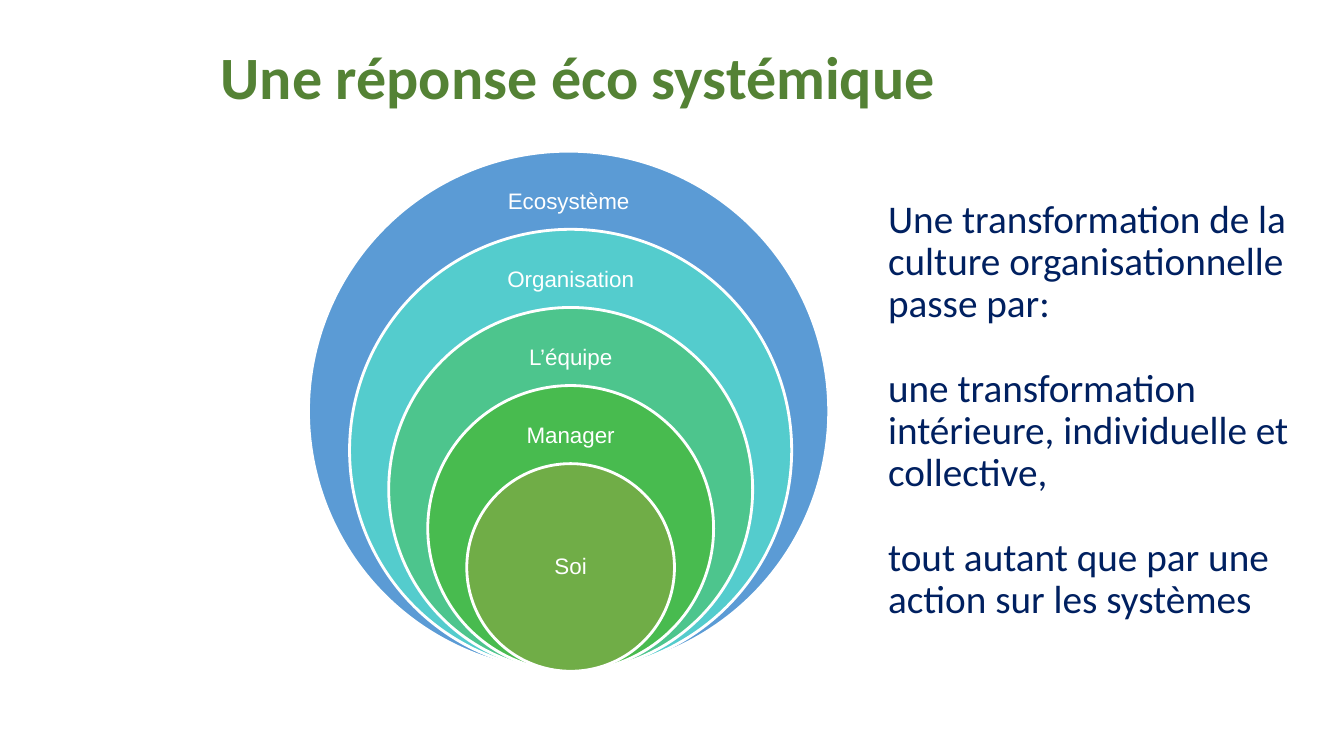
from dataclasses import dataclass

from pptx import Presentation
from pptx.dml.color import RGBColor
from pptx.enum.shapes import MSO_SHAPE
from pptx.enum.text import MSO_ANCHOR, PP_ALIGN
from pptx.slide import Slide
from pptx.util import Inches, Pt

OVAL = MSO_SHAPE.OVAL
MIDDLE = MSO_ANCHOR.MIDDLE
LEFT, CENTER = PP_ALIGN.LEFT, PP_ALIGN.CENTER


@dataclass(frozen=True)
class TextStyle:
    font: str
    size: float
    color: str
    align: PP_ALIGN
    bold: bool = False
    side_inset: float = 0.1
    edge_inset: float = 0.05
    gap: float = 0


@dataclass(frozen=True)
class Theme:
    title: TextStyle = TextStyle("Calibri", 42.9, "548235", CENTER, bold=True)
    message: TextStyle = TextStyle("Calibri", 28, "002060", LEFT, gap=30)
    label: TextStyle = TextStyle("Arial", 16, "FFFFFF", CENTER,
                                 side_inset=0.12, edge_inset=0.12)
    outline: str = "FFFFFF"
    outline_width: float = 2


@dataclass(frozen=True)
class Box:
    left: float
    top: float
    width: float
    height: float


@dataclass(frozen=True)
class Ring:
    name: str
    color: str
    label_width: float
    center: float = 5.66
    label_drop: float = 0.25
    label_height: float = 0.51


THEME = Theme()
RINGS = [
    Ring("Ecosystème", "5B9BD5", 1.93, center=5.64),
    Ring("Organisation", "54CCCD", 1.89),
    Ring("L’équipe", "4DC58D", 1.87),
    Ring("Manager", "48BB4F", 1.53),
    Ring("Soi", "70AD47", 1.46, label_drop=0.51, label_height=1.03),
]
RINGS_BOTTOM = 6.66
OUTER_DIAMETER, INNER_DIAMETER = 5.16, 2.06
MESSAGE = [
    "Une transformation de la culture organisationnelle passe par:",
    "une transformation intérieure, individuelle et collective,",
    "tout autant que par une action sur les systèmes",
]


def add_text(page: Slide, box: Box, lines: list[str], style: TextStyle) -> None:
    shape = page.shapes.add_textbox(Inches(box.left), Inches(box.top),
                                    Inches(box.width), Inches(box.height))
    frame = shape.text_frame
    frame.word_wrap = True
    frame.vertical_anchor = MIDDLE
    frame.margin_left = frame.margin_right = Inches(style.side_inset)
    frame.margin_top = frame.margin_bottom = Inches(style.edge_inset)
    frame.text = "\n".join(lines)
    for index, para in enumerate(frame.paragraphs):
        para.alignment = style.align
        para.line_spacing = 0.9
        para.space_before = Pt(style.gap if index else 0)
        for span in para.runs:
            span.font.name = style.font
            span.font.size = Pt(style.size)
            span.font.bold = style.bold
            span.font.color.rgb = RGBColor.from_string(style.color)


def add_ring(page: Slide, ring: Ring, diameter: float) -> None:
    """Draw a labelled circle resting on the common bottom line."""
    top = RINGS_BOTTOM - diameter
    circle = page.shapes.add_shape(OVAL, Inches(ring.center - diameter / 2), Inches(top),
                                   Inches(diameter), Inches(diameter))
    circle.shadow.inherit = False
    circle.fill.solid()
    circle.fill.fore_color.rgb = RGBColor.from_string(ring.color)
    circle.line.color.rgb = RGBColor.from_string(THEME.outline)
    circle.line.width = Pt(THEME.outline_width)
    label_box = Box(ring.center - ring.label_width / 2, top + ring.label_drop,
                    ring.label_width, ring.label_height)
    add_text(page, label_box, [ring.name], THEME.label)


def main() -> None:
    deck = Presentation()
    deck.slide_width, deck.slide_height = Inches(13.33), Inches(7.5)
    page = deck.slides.add_slide(deck.slide_layouts[6])

    add_text(page, Box(8.71, 2.96, 4.45, 2.23), MESSAGE, THEME.message)
    step = (OUTER_DIAMETER - INNER_DIAMETER) / (len(RINGS) - 1)
    for index, ring in enumerate(RINGS):
        add_ring(page, ring, OUTER_DIAMETER - index * step)
    add_text(page, Box(1.93, 0.08, 7.6, 1.43), ["Une réponse éco systémique"], THEME.title)

    deck.save("out.pptx")


if __name__ == "__main__":
    main()
